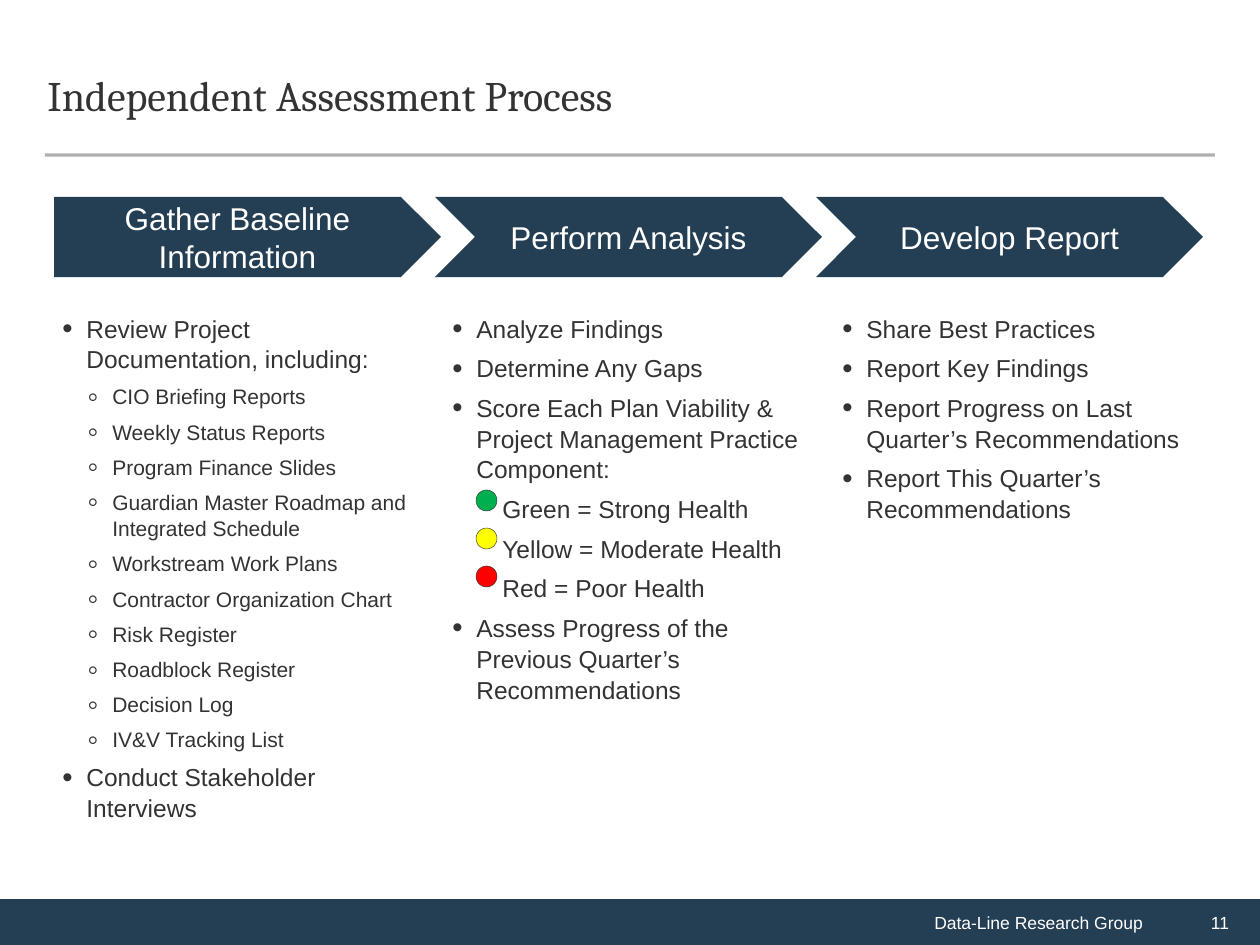
from dataclasses import dataclass

from lxml import etree
from pptx import Presentation
from pptx import util as u
from pptx.dml.color import RGBColor
from pptx.enum import shapes, text
from pptx.oxml.ns import qn

PX = 914400 / 126


@dataclass
class Theme:
    navy: str = "243F54"
    ink: str = "333333"
    white: str = "FFFFFF"
    rule: str = "45433E"
    body: str = "Arial"
    serif: str = "Cambria"
    title: int = 24
    step: int = 18
    main: int = 14
    sub: int = 12
    foot: int = 10


theme = Theme()
kinds = shapes.MSO_SHAPE
align = text.PP_ALIGN


def draw(kind, box, fill):
    """Add a plain shape, or a wrapping text box when kind is None."""
    area = [u.Emu(round(n * PX)) for n in box]
    if kind is None:
        shape = slide.shapes.add_textbox(*area)
    else:
        shape = slide.shapes.add_shape(kind, *area)
        shape.shadow.inherit = False
        shape.fill.solid()
        shape.fill.fore_color.rgb = RGBColor.from_string(fill)
        shape.line.fill.background()
    shape.text_frame.word_wrap = True
    return shape


def style(para, size, color, side=align.LEFT, face=theme.body):
    para.alignment = side
    for run in para.runs:
        run.font.size = u.Pt(size)
        run.font.name = face
        run.font.color.rgb = RGBColor.from_string(color)


deck = Presentation()
deck.slide_width, deck.slide_height = u.Inches(10), u.Inches(7.5)
slide = deck.slides.add_slide(deck.slide_layouts[6])

# Footer band
for words, left, wide, side, pad in (
    ("Data-Line Research Group", 0, 1155, align.RIGHT, 36),
    ("11", 1155, 105, align.CENTER, 25),
):
    bar = draw(kinds.RECTANGLE, (left, 899, wide, 46), theme.navy)
    bar.text_frame.vertical_anchor = text.MSO_ANCHOR.MIDDLE
    para = bar.text_frame.paragraphs[0]
    para.text = words
    style(para, theme.foot, theme.white, side)
    para._p.get_or_add_pPr().set("marL", str(round(pad * PX)))

# Title and rule
head = draw(None, (35, 38, 1188, 118), None)
head.text_frame.vertical_anchor = text.MSO_ANCHOR.MIDDLE
para = head.text_frame.paragraphs[0]
para.text = "Independent Assessment Process"
para.line_spacing = u.Pt(26)
style(para, theme.title, theme.ink, face=theme.serif)

ends = [u.Emu(round(n * PX)) for n in (45, 155, 1215, 155)]
rule = slide.shapes.add_connector(shapes.MSO_CONNECTOR.STRAIGHT, *ends)
rule.line.width = u.Pt(1.75)
rule.line.color.rgb = RGBColor.from_string(theme.rule)
tint = rule.line._ln.find(".//" + qn("a:srgbClr"))
etree.SubElement(tint, qn("a:alpha")).set("val", "42000")
etree.SubElement(rule._element.spPr, qn("a:effectLst"))

# Process steps
steps = ("Gather Baseline Information", "Perform Analysis", "Develop Report")
for i, words in enumerate(steps):
    kind = kinds.CHEVRON if i else kinds.PENTAGON
    step = draw(kind, (54 + 381 * i, 197, 387, 80), theme.navy)
    step.text_frame.vertical_anchor = text.MSO_ANCHOR.MIDDLE
    para = step.text_frame.paragraphs[0]
    para.text = words
    style(para, theme.step, theme.white, align.CENTER)

# Lists: level name -> left margin and hang in px, bullet, bullet size, type size
levels = {
    "main": (24, -24, "•", 120, theme.main),
    "sub": (50, -25, "◦", 150, theme.sub),
    "key": (50, 0, None, 100, theme.main),
}
lists = (
    (
        ("main", "Review Project Documentation, including:"),
        ("sub", "CIO Briefing Reports"),
        ("sub", "Weekly Status Reports"),
        ("sub", "Program Finance Slides"),
        ("sub", "Guardian Master Roadmap and Integrated Schedule"),
        ("sub", "Workstream Work Plans"),
        ("sub", "Contractor Organization Chart"),
        ("sub", "Risk Register"),
        ("sub", "Roadblock Register"),
        ("sub", "Decision Log"),
        ("sub", "IV&V Tracking List"),
        ("main", "Conduct Stakeholder Interviews"),
    ),
    (
        ("main", "Analyze Findings"),
        ("main", "Determine Any Gaps"),
        ("main", "Score Each Plan Viability & Project Management Practice Component:"),
        ("key", "Green = Strong Health"),
        ("key", "Yellow = Moderate Health"),
        ("key", "Red = Poor Health"),
        ("main", "Assess Progress of the Previous Quarter’s Recommendations"),
    ),
    (
        ("main", "Share Best Practices"),
        ("main", "Report Key Findings"),
        ("main", "Report Progress on Last Quarter’s Recommendations"),
        ("main", "Report This Quarter’s Recommendations"),
    ),
)
for i, items in enumerate(lists):
    frame = draw(None, (50 + 390 * i, 306, 381, 577), None).text_frame
    for j, (level, words) in enumerate(items):
        left, hang, mark, scale, size = levels[level]
        para = frame.add_paragraph() if j else frame.paragraphs[0]
        para.text = words
        para.level = 0 if level == "main" else 1
        para.line_spacing = 1.05
        if j:
            para.space_before = u.Pt(5)
        props = para._p.get_or_add_pPr()
        props.set("marL", str(round(left * PX)))
        props.set("indent", str(round(hang * PX)))
        if mark:
            tint = etree.SubElement(props, qn("a:buClr"))
            etree.SubElement(tint, qn("a:srgbClr")).set("val", theme.ink)
            etree.SubElement(props, qn("a:buSzPct")).set("val", str(scale * 1000))
            etree.SubElement(props, qn("a:buFont")).set("typeface", theme.body)
            etree.SubElement(props, qn("a:buChar")).set("char", mark)
        else:
            etree.SubElement(props, qn("a:buNone"))
        style(para, size, theme.ink)

# Health dots
for i, color in enumerate(("00B050", "FFFF00", "FF0000")):
    dot = draw(kinds.OVAL, (476, 490 + 38 * i, 21, 21), color)
    dot.line.color.rgb = RGBColor.from_string(theme.ink)
    dot.line.width = u.Pt(0.25)

deck.save("out.pptx")
